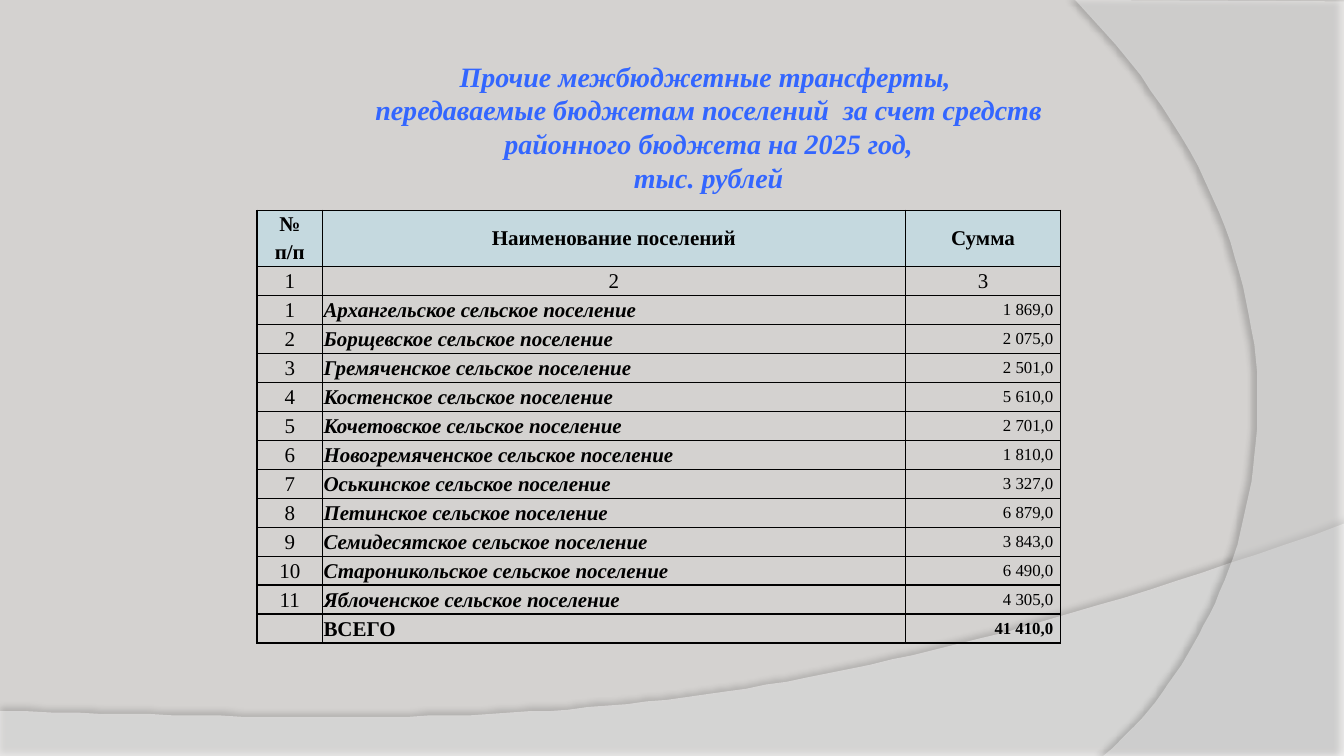
from lxml import etree
from pptx import Presentation, util as u
from pptx.dml.color import RGBColor
from pptx.enum import text
from pptx.oxml import ns

SETTLEMENTS = [
    ("Архангельское", "1 869,0"), ("Борщевское", "2 075,0"),
    ("Гремяченское", "2 501,0"), ("Костенское", "5 610,0"),
    ("Кочетовское", "2 701,0"), ("Новогремяченское", "1 810,0"),
    ("Оськинское", "3 327,0"), ("Петинское", "6 879,0"),
    ("Семидесятское", "3 843,0"), ("Староникольское", "6 490,0"),
    ("Яблоченское", "4 305,0"),
]
HEADING = ("Прочие межбюджетные трансферты, \v"
           "передаваемые бюджетам поселений  за счет средств\v"
           "районного бюджета на 2025 год,\vтыс. рублей")
CENTER, JUSTIFY, RIGHT = (text.PP_ALIGN.CENTER, text.PP_ALIGN.JUSTIFY,
                          text.PP_ALIGN.RIGHT)


def color(hex_code):
    return RGBColor.from_string(hex_code)


def child(parent, tag, **attributes):
    return etree.SubElement(parent, ns.qn(tag), attributes)


def curve(start, control_a, control_b, end, steps=60):
    points = []
    for step in range(steps + 1):
        t = step / steps
        weights = ((1 - t) ** 3, 3 * t * (1 - t) ** 2, 3 * t * t * (1 - t), t ** 3)
        points.append(tuple(
            sum(w * p[axis] for w, p in zip(weights, (start, control_a, control_b, end)))
            for axis in (0, 1)))
    return points


class Deck:
    """Style and current slide, with one method for each kind of element."""

    font = "Times New Roman"
    ink, heading_ink = "000000", "3366FF"
    backdrop, header_fill, sweep_fill = "D4D2D0", "C5D9DF", "FFFFFF"

    def __init__(self, width, height):
        self.presentation = Presentation()
        self.presentation.slide_width = u.Pt(width)
        self.presentation.slide_height = u.Pt(height)
        self.slide = self.presentation.slides.add_slide(
            self.presentation.slide_layouts[5])
        fill = self.slide.background.fill
        fill.solid()
        fill.fore_color.rgb = color(self.backdrop)

    def style(self, paragraph, align, size, hex_code, bold=False, italic=False):
        paragraph.alignment = align
        font = paragraph.font
        font.name, font.size = self.font, u.Pt(size)
        font.bold, font.italic = bold, italic
        font.color.rgb = color(hex_code)

    def sweep(self, points, opacity, shadow_opacity, distance, direction):
        builder = self.slide.shapes.build_freeform(
            *points[0], scale=float(u.Pt(1)))
        builder.add_line_segments(points[1:], close=True)
        band = builder.convert_to_shape()
        band.line.fill.background()
        band.fill.solid()
        band.fill.fore_color.rgb = color(self.sweep_fill)
        properties = band.element.spPr
        child(properties.find(".//" + ns.qn("a:srgbClr")), "a:alpha",
              val=str(opacity * 1000))
        shadow = child(child(properties, "a:effectLst"), "a:outerShdw",
                       blurRad=str(u.Pt(4)), dist=str(u.Pt(distance)),
                       dir=str(direction * 60000), algn="ctr", rotWithShape="0")
        child(child(shadow, "a:srgbClr", val=self.ink), "a:alpha",
              val=str(shadow_opacity * 1000))

    def title(self, wording, left, top, width, height):
        heading = self.slide.shapes.title
        heading.left, heading.top = u.Pt(left), u.Pt(top)
        heading.width, heading.height = u.Pt(width), u.Pt(height)
        frame = heading.text_frame
        frame.text = wording
        frame.word_wrap = True
        frame.auto_size = text.MSO_AUTO_SIZE.NONE
        frame.vertical_anchor = text.MSO_ANCHOR.MIDDLE
        self.style(frame.paragraphs[0], CENTER, 20, self.heading_ink, True, True)
        heading.element.getparent().append(heading.element)

    def table(self, left, top, widths, heights):
        frame = self.slide.shapes.add_table(
            len(heights), len(widths), u.Pt(left), u.Pt(top),
            u.Pt(sum(widths)), u.Pt(sum(heights)))
        grid = frame.table
        grid.first_row = grid.horz_banding = False
        for column, width in zip(grid.columns, widths):
            column.width = u.Pt(width)
        for row, height in zip(grid.rows, heights):
            row.height = u.Pt(height)
        return grid

    def cell(self, cell, wording, align=CENTER, size=15, bold=False, italic=False,
             fill=None, sides="LRTB"):
        cell.text = wording
        cell.vertical_anchor = text.MSO_ANCHOR.MIDDLE
        side, top = (5.4, 0) if align == RIGHT else (0.7, 0.7)
        cell.margin_left = cell.margin_right = u.Pt(side)
        cell.margin_top, cell.margin_bottom = u.Pt(top), u.Pt(0)
        self.style(cell.text_frame.paragraphs[0], align, size, self.ink, bold, italic)
        properties = cell._tc.get_or_add_tcPr()
        for edge in "LRTB":
            line = child(properties, "a:ln" + edge, w=str(u.Pt(1)))
            if edge in sides:
                child(child(line, "a:solidFill"), "a:srgbClr", val=self.ink)
            else:
                child(line, "a:noFill")
        if fill:
            cell.fill.solid()
            cell.fill.fore_color.rgb = color(fill)
        else:
            cell.fill.background()


def main():
    width, height = 960, 540
    deck = Deck(width, height)
    deck.sweep([(0, height), (width, height)]
               + curve((width, 374.4), (536.4, 524.9), (375.1, 517.7), (0, 507.6)),
               45, 35, 3.5, 270)
    deck.sweep([(width, 1.4), (width, height)]
               + curve((788.4, height), (897.1, 445.7), (977, 216), (768.2, 0)),
               40, 45, 4, 180)

    transfers = deck.table(183.6, 150.2, [46.8, 416.2, 111.2], [19.4] + [20.7] * 14)
    for column, caption in ((1, "Наименование поселений"), (2, "Сумма")):
        transfers.cell(0, column).merge(transfers.cell(1, column))
        for row, wording in enumerate((caption, "")):
            deck.cell(transfers.cell(row, column), wording, bold=True,
                      fill=deck.header_fill)
    for row, (caption, sides) in enumerate((("№", "LRT"), ("п/п", "LRB"))):
        deck.cell(transfers.cell(row, 0), caption, bold=True,
                  fill=deck.header_fill, sides=sides)
    for column in range(3):
        deck.cell(transfers.cell(2, column), str(column + 1))
    for number, (settlement, amount) in enumerate(SETTLEMENTS, 1):
        row = number + 2
        deck.cell(transfers.cell(row, 0), str(number))
        deck.cell(transfers.cell(row, 1), settlement + " сельское поселение",
                  JUSTIFY, bold=True, italic=True)
        deck.cell(transfers.cell(row, 2), amount, RIGHT, 12)
    deck.cell(transfers.cell(14, 0), "")
    deck.cell(transfers.cell(14, 1), "ВСЕГО", JUSTIFY, bold=True)
    deck.cell(transfers.cell(14, 2), "41 410,0", RIGHT, 12, bold=True)

    deck.title(HEADING, 182.9, 59.8, 646.6, 61.2)
    deck.presentation.save("out.pptx")


if __name__ == "__main__":
    main()
